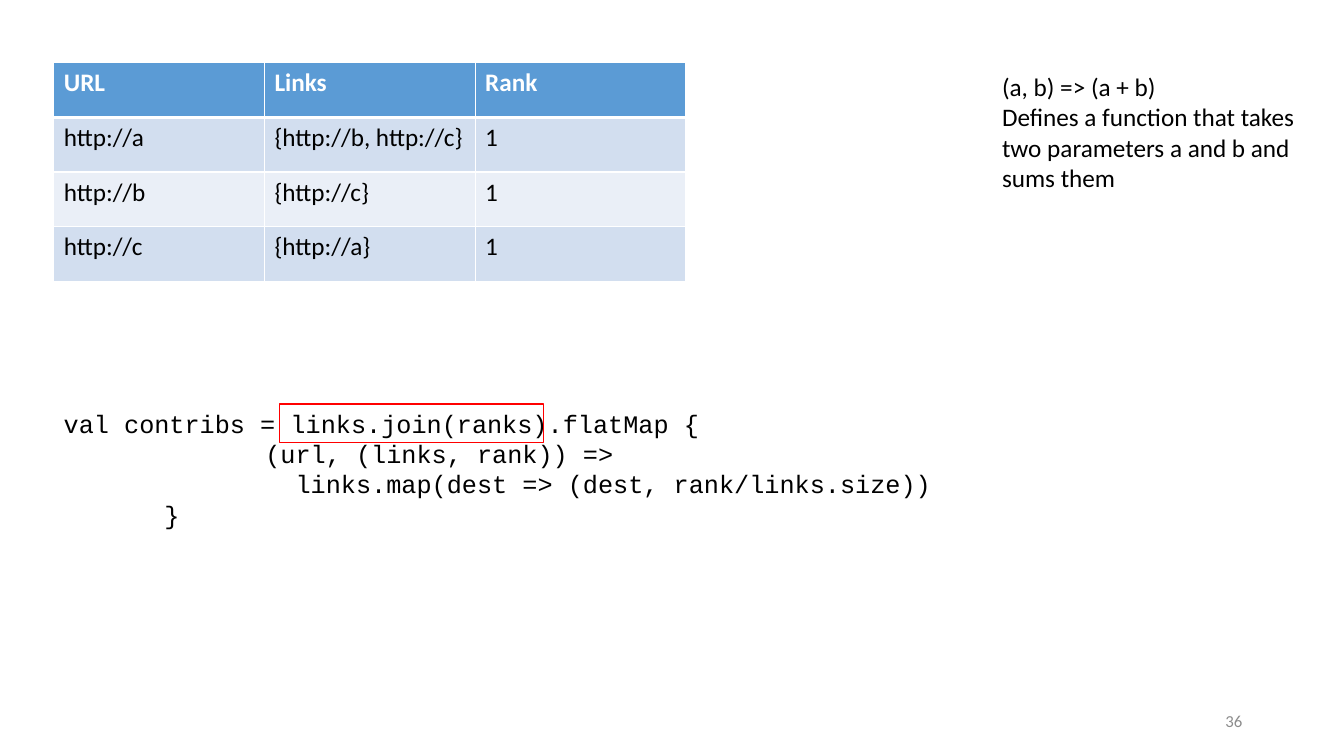
from lxml.etree import SubElement
from pptx import Presentation
from pptx.dml.color import RGBColor
from pptx.enum.shapes import MSO_SHAPE
from pptx.enum.text import MSO_ANCHOR, PP_ALIGN
from pptx.oxml.ns import qn
from pptx.util import Inches, Pt

BODY = {"name": "Calibri", "size": Pt(18), "bold": False}
HEADER = BODY | {"bold": True}
CODE = BODY | {"name": "Courier New"}
NUMBER = BODY | {"size": Pt(12)}

RANK_TABLE = [
    ["URL", "Links", "Rank"],
    ["http://a", "{http://b, http://c}", "1"],
    ["http://b", "{http://c}", "1"],
    ["http://c", "{http://a}", "1"],
]
CONTRIBS_CODE = [
    "val contribs = links.join(ranks).flatMap {",
    "\t\t(url, (links, rank)) =>",
    "\t\t  links.map(dest => (dest, rank/links.size))",
    "\t}",
]
FUNCTION_NOTE = [
    "(a, b) => (a + b)",
    "Defines a function that takes two parameters a and b and sums them",
]


def color(hex_string):
    return RGBColor.from_string(hex_string)


class SlideBuilder:
    """Places elements on a grid of 100 columns by 100 rows."""

    def __init__(self, presentation):
        self.slide = presentation.slides.add_slide(presentation.slide_layouts[6])
        self.column = presentation.slide_width / 100
        self.row = presentation.slide_height / 100

    def place(self, left, top, width, height):
        return (round(left * self.column), round(top * self.row),
                round(width * self.column), round(height * self.row))

    def styled_run(self, paragraph, text, style, text_color):
        run = paragraph.add_run()
        run.text = text
        for attribute, value in style.items():
            setattr(run.font, attribute, value)
        run.font.color.rgb = color(text_color)

    def text(self, area, lines, style, text_color="000000",
             align=PP_ALIGN.LEFT, anchor=MSO_ANCHOR.TOP, tabs=()):
        frame = self.slide.shapes.add_textbox(*self.place(*area)).text_frame
        frame.word_wrap = True
        frame.vertical_anchor = anchor
        for index, line in enumerate(lines):
            paragraph = frame.add_paragraph() if index else frame.paragraphs[0]
            paragraph.alignment = align
            if tabs:
                tab_list = SubElement(paragraph._p.get_or_add_pPr(), qn("a:tabLst"))
                for position in tabs:
                    SubElement(tab_list, qn("a:tab"), pos=str(position), algn="l")
            self.styled_run(paragraph, line, style, text_color)

    def border(self, cell, side, width):
        line = SubElement(cell._tc.get_or_add_tcPr(), qn(f"a:ln{side}"), w=str(Pt(width)))
        fill = SubElement(line, qn("a:solidFill"))
        SubElement(fill, qn("a:srgbClr"), val="FFFFFF")

    def table(self, area, rows):
        left, top, width, height = self.place(*area)
        table = self.slide.shapes.add_table(
            len(rows), len(rows[0]), left, top, width, height).table
        for row_index, values in enumerate(rows):
            is_header = row_index == 0
            band = "5B9BD5" if is_header else ("EAEFF7", "D2DEEF")[row_index % 2]
            for column_index, value in enumerate(values):
                cell = table.cell(row_index, column_index)
                for side in "LRTB":
                    thick = (side, row_index) in (("B", 0), ("T", 1))
                    self.border(cell, side, 3 if thick else 1)
                cell.fill.solid()
                cell.fill.fore_color.rgb = color(band)
                self.styled_run(cell.text_frame.paragraphs[0], value,
                                HEADER if is_header else BODY,
                                "FFFFFF" if is_header else "000000")

    def outline(self, area, line_color):
        shape = self.slide.shapes.add_shape(MSO_SHAPE.RECTANGLE, *self.place(*area))
        shape.shadow.inherit = False
        shape.fill.background()
        shape.line.color.rgb = color(line_color)
        shape.line.width = Pt(1)


def main():
    presentation = Presentation()
    presentation.slide_width = Inches(13.33)
    presentation.slide_height = Inches(7.5)
    builder = SlideBuilder(presentation)

    # Links and ranks
    builder.table((4, 8.3, 47.04, 28.93), RANK_TABLE)

    # Slide number
    builder.text((70.67, 92.67, 22.5, 5.33), ["36"], NUMBER, "8C8C8C",
                 PP_ALIGN.RIGHT, MSO_ANCHOR.MIDDLE)

    # Code with the join highlighted
    builder.text((4, 53.33, 79.45, 17.47), CONTRIBS_CODE, CODE,
                 tabs=(Inches(1), Inches(2)))
    builder.outline((20.8, 53.47, 19.65, 5.07), "FF0000")

    # Explanation of the function syntax
    builder.text((73.82, 8.8, 24.23, 17.47), FUNCTION_NOTE, BODY)

    presentation.save("out.pptx")


if __name__ == "__main__":
    main()
